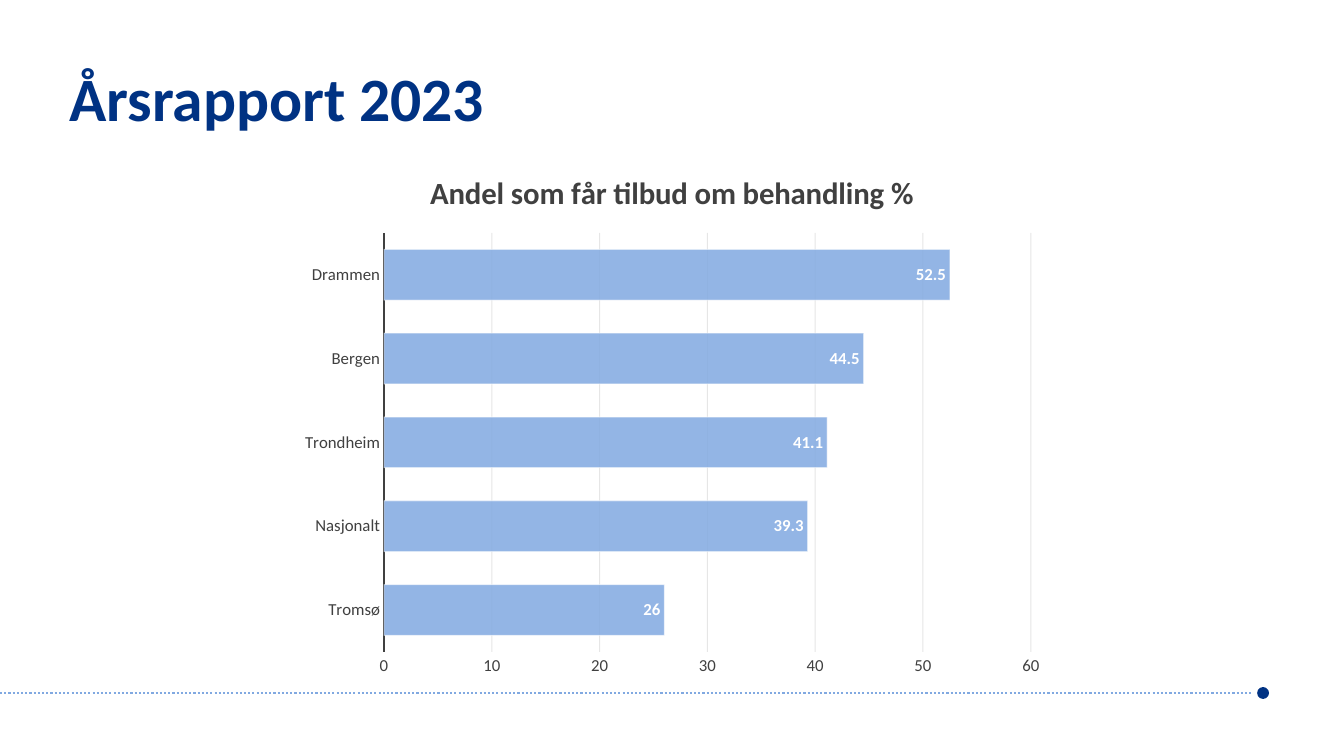
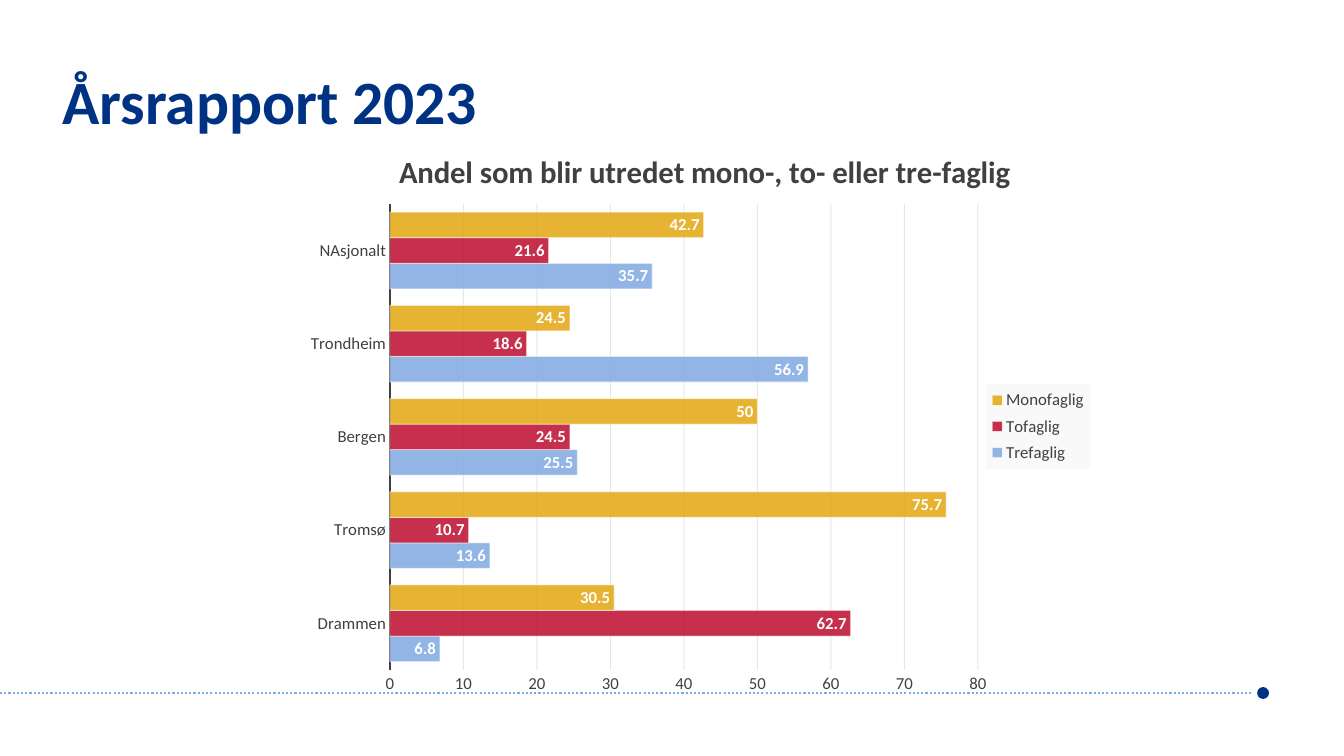
"""Build two annual report slides with horizontal bar charts."""
from dataclasses import dataclass
from typing import Optional

from lxml.etree import SubElement
from pptx import Presentation
from pptx.chart.chart import Chart
from pptx.chart.data import CategoryChartData
from pptx.dml.color import RGBColor
from pptx.enum.chart import XL_CHART_TYPE as ChartType
from pptx.enum.chart import XL_LABEL_POSITION as LabelPosition
from pptx.enum.chart import XL_LEGEND_POSITION as LegendPosition
from pptx.enum.chart import XL_TICK_MARK as TickMark
from pptx.enum.dml import MSO_LINE as LineDash
from pptx.enum.shapes import MSO_CONNECTOR as ConnectorType
from pptx.enum.shapes import MSO_SHAPE as ShapeType
from pptx.enum.text import MSO_ANCHOR as Anchor
from pptx.oxml import parse_xml
from pptx.oxml.ns import nsdecls, qn
from pptx.slide import Slide
from pptx.util import Pt

FONT = "Calibri"
COLORS = {
    "navy": "003283",
    "blue": "81A9E1",
    "red": "BD0C2E",
    "gold": "E3A610",
    "text": "404040",
    "grid": "0D0D0D",
    "legend": "F9F9F9",
    "white": "FFFFFF",
}
SLIDE_WIDTH, SLIDE_HEIGHT = 960, 540
FOOTER_Y, FOOTER_END = 495, 894
DOT_LEFT, DOT_SIZE = 898, 8.5
TITLE_WIDTH, TITLE_HEIGHT = 828, 104.4


@dataclass(frozen=True)
class Box:
    left: float
    top: float
    width: float
    height: float

    def lengths(self) -> tuple:
        return Pt(self.left), Pt(self.top), Pt(self.width), Pt(self.height)


@dataclass(frozen=True)
class BarSeries:
    name: str
    values: tuple
    color: str


@dataclass(frozen=True)
class ReportSlide:
    title: str
    title_left: float
    title_top: float
    chart_title: str
    categories: tuple
    series: tuple
    maximum: int
    chart_box: Box
    plot_box: Box
    legend_box: Optional[Box] = None


REPORT_SLIDES = (
    ReportSlide(
        title="Årsrapport 2023",
        title_left=42.5,
        title_top=20,
        chart_title="Andel som får tilbud om behandling %",
        categories=("Tromsø", "Nasjonalt", "Trondheim", "Bergen", "Drammen"),
        series=(
            BarSeries("Andel som får tilbud om behandling %",
                      (26, 39.3, 41.1, 44.5, 52.5), "blue"),
        ),
        maximum=60,
        chart_box=Box(206.6, 107.3, 546.5, 383.8),
        plot_box=Box(274.3, 166.4, 462, 299.3),
    ),
    ReportSlide(
        title="Årsrapport 2023",
        title_left=37.5,
        title_top=22.3,
        chart_title="Andel som blir utredet mono-, to- eller tre-faglig",
        categories=("Drammen", "Tromsø", "Bergen", "Trondheim", "NAsjonalt"),
        series=(
            BarSeries("Trefaglig", (6.8, 13.6, 25.5, 56.9, 35.7), "blue"),
            BarSeries("Tofaglig", (62.7, 10.7, 24.5, 18.6, 21.6), "red"),
            BarSeries("Monofaglig", (30.5, 75.7, 50, 24.5, 42.7), "gold"),
        ),
        maximum=80,
        chart_box=Box(211, 91.4, 584.6, 412.6),
        plot_box=Box(278.5, 145.7, 420, 332.9),
        legend_box=Box(704.3, 274.3, 74.3, 60.7),
    ),
)


def rgb(name: str) -> RGBColor:
    return RGBColor.from_string(COLORS[name])


def style_font(font, size: float, color: str, bold: bool = False) -> None:
    font.name = FONT
    font.size = Pt(size)
    font.bold = bold
    font.color.rgb = rgb(color)


def style_line(line, color: str, width: float) -> None:
    line.color.rgb = rgb(color)
    line.width = Pt(width)


def set_opacity(element, query: str, percent: int) -> None:
    for color in element.xpath(query):
        SubElement(color, qn("a:alpha")).set("val", str(percent * 1000))


def make_layout(part: Box, chart_box: Box, inner: bool = False):
    target = '<c:layoutTarget val="inner"/>' if inner else ""
    fractions = {
        "x": (part.left - chart_box.left) / chart_box.width,
        "y": (part.top - chart_box.top) / chart_box.height,
        "w": part.width / chart_box.width,
        "h": part.height / chart_box.height,
    }
    modes = '<c:xMode val="edge"/><c:yMode val="edge"/>'
    sizes = "".join(f'<c:{key} val="{value:.4f}"/>' for key, value in fractions.items())
    return parse_xml(
        f'<c:layout {nsdecls("c")}><c:manualLayout>{target}{modes}{sizes}'
        "</c:manualLayout></c:layout>"
    )


def replace_layout(parent, layout, index: int) -> None:
    for existing in parent.findall(qn("c:layout")):
        parent.remove(existing)
    parent.insert(index, layout)


def add_footer(slide: Slide) -> None:
    connector = slide.shapes.add_connector(
        ConnectorType.STRAIGHT, Pt(0), Pt(FOOTER_Y), Pt(FOOTER_END), Pt(FOOTER_Y)
    )
    style_line(connector.line, "blue", 1.5)
    connector.line.dash_style = LineDash.ROUND_DOT
    SubElement(connector._element.spPr, qn("a:effectLst"))
    dot_box = Box(DOT_LEFT, FOOTER_Y - DOT_SIZE / 2, DOT_SIZE, DOT_SIZE)
    dot = slide.shapes.add_shape(ShapeType.OVAL, *dot_box.lengths())
    dot.shadow.inherit = False
    dot.fill.solid()
    dot.fill.fore_color.rgb = rgb("navy")
    dot.line.fill.background()


def add_title(slide: Slide, report: ReportSlide) -> None:
    box = Box(report.title_left, report.title_top, TITLE_WIDTH, TITLE_HEIGHT)
    frame = slide.shapes.add_textbox(*box.lengths()).text_frame
    frame.word_wrap = True
    frame.vertical_anchor = Anchor.MIDDLE
    paragraph = frame.paragraphs[0]
    paragraph.line_spacing = 0.9
    run = paragraph.add_run()
    run.text = report.title
    style_font(run.font, 44, "navy", bold=True)


def style_axes(chart: Chart, maximum: int) -> None:
    for axis in (chart.category_axis, chart.value_axis):
        axis.major_tick_mark = TickMark.NONE
        axis.minor_tick_mark = TickMark.NONE
        style_font(axis.tick_labels.font, 12, "text")
    style_line(chart.category_axis.format.line, "text", 1.5)
    chart.category_axis.has_major_gridlines = False
    values = chart.value_axis
    values.minimum_scale = 0
    values.maximum_scale = maximum
    values.major_unit = 10
    values.format.line.fill.background()
    values.has_major_gridlines = True
    style_line(values.major_gridlines.format.line, "grid", 0.75)
    set_opacity(values._element, "./c:majorGridlines//a:srgbClr", 10)


def style_series(chart: Chart, series_data: tuple) -> None:
    plot = chart.plots[0]
    plot.gap_width = 65
    plot.overlap = 0
    plot.vary_by_categories = False
    for series, data in zip(plot.series, series_data):
        series.format.fill.solid()
        series.format.fill.fore_color.rgb = rgb(data.color)
        style_line(series.format.line, "white", 0.75)
        set_opacity(series._element, "./c:spPr/a:solidFill/a:srgbClr", 85)
        set_opacity(series._element, "./c:spPr/a:ln//a:srgbClr", 50)
        labels = series.data_labels
        labels.show_value = True
        labels.position = LabelPosition.INSIDE_END
        style_font(labels.font, 12, "white", bold=True)


def add_legend(chart: Chart, legend_box: Box, chart_box: Box) -> None:
    chart.has_legend = True
    legend = chart.legend
    legend.position = LegendPosition.RIGHT
    legend.include_in_layout = False
    style_font(legend.font, 12, "text")
    element = legend._element
    replace_layout(element, make_layout(legend_box, chart_box), 1)
    background = parse_xml(
        f'<c:spPr {nsdecls("c", "a")}><a:solidFill>'
        f'<a:srgbClr val="{COLORS["legend"]}"/></a:solidFill></c:spPr>'
    )
    element.find(qn("c:txPr")).addprevious(background)


def add_bar_chart(slide: Slide, report: ReportSlide) -> None:
    data = CategoryChartData()
    data.categories = report.categories
    for series in report.series:
        data.add_series(series.name, series.values)
    chart = slide.shapes.add_chart(
        ChartType.BAR_CLUSTERED, *report.chart_box.lengths(), data
    ).chart
    style_font(chart.font, 10, "text")
    chart.has_title = True
    chart.chart_title.include_in_layout = False
    run = chart.chart_title.text_frame.paragraphs[0].add_run()
    run.text = report.chart_title
    style_font(run.font, 22, "text", bold=True)
    style_axes(chart, report.maximum)
    style_series(chart, report.series)
    plot_area = chart._chartSpace.chart.plotArea
    replace_layout(plot_area, make_layout(report.plot_box, report.chart_box, inner=True), 0)
    chart.has_legend = False
    if report.legend_box:
        add_legend(chart, report.legend_box, report.chart_box)


def main() -> None:
    presentation = Presentation()
    presentation.slide_width = Pt(SLIDE_WIDTH)
    presentation.slide_height = Pt(SLIDE_HEIGHT)
    for report in REPORT_SLIDES:
        slide = presentation.slides.add_slide(presentation.slide_layouts[6])
        add_footer(slide)
        add_title(slide, report)
        add_bar_chart(slide, report)
    presentation.save("out.pptx")


if __name__ == "__main__":
    main()
